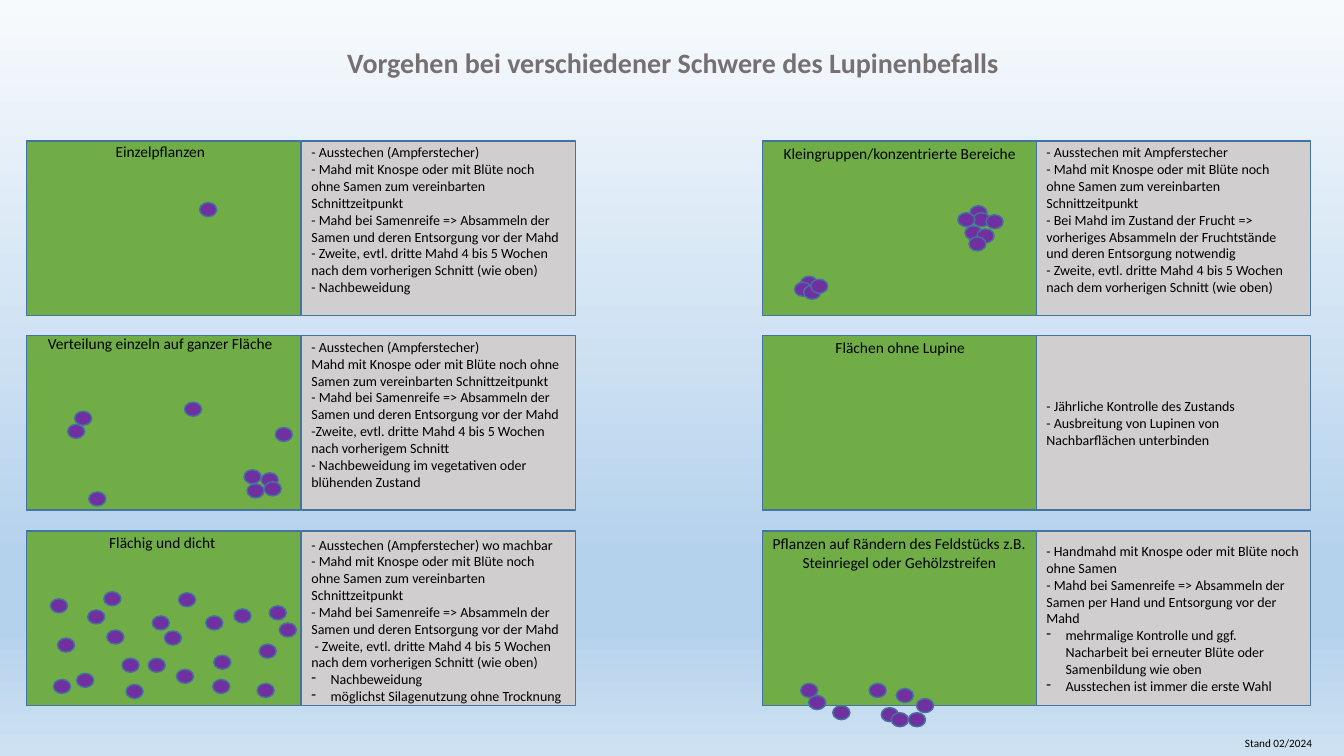
from dataclasses import dataclass

import pptx
import pptx.dml.color
import pptx.enum.shapes
import pptx.enum.text
import pptx.oxml.ns
import pptx.util
from lxml import etree

Inches = pptx.util.Inches
RGBColor = pptx.dml.color.RGBColor
Align = pptx.enum.text.PP_ALIGN
Anchor = pptx.enum.text.MSO_ANCHOR
Shape = pptx.enum.shapes.MSO_SHAPE
qn = pptx.oxml.ns.qn

BLACK = RGBColor(0x00, 0x00, 0x00)
TITLE_GRAY = RGBColor(0x76, 0x71, 0x71)
MEADOW_GREEN = RGBColor(0x70, 0xAD, 0x47)
NOTE_GRAY = RGBColor(0xD0, 0xCE, 0xCE)
LUPIN_PURPLE = RGBColor(0x70, 0x30, 0xA0)
OUTLINE_BLUE = RGBColor(0x43, 0x73, 0x9E)
SKY_STOPS = [
    (0, RGBColor(0xF7, 0xFA, 0xFD)),
    (74, RGBColor(0xB5, 0xD2, 0xEC)),
    (83, RGBColor(0xB5, 0xD2, 0xEC)),
    (100, RGBColor(0xCE, 0xE1, 0xF2)),
]

COLUMNS = [(0.26, 2.99), (7.56, 10.28)]  # left edges of meadow and measures
ROWS = [1.4, 3.33, 5.27]
PANEL_SIZE = (2.72, 1.73)
LUPIN_SIZE = (0.17, 0.14)

MOWING = "- Mahd mit Knospe oder mit Blüte noch ohne Samen zum vereinbarten Schnittzeitpunkt"
COLLECTING = "- Mahd bei Samenreife => Absammeln der Samen und deren Entsorgung vor der Mahd"
SECOND_CUT = "- Zweite, evtl. dritte Mahd 4 bis 5 Wochen nach dem vorherigen Schnitt (wie oben)"


@dataclass
class Panel:
    column: int
    row: int
    caption: str
    caption_box: tuple
    measures: list
    lupins: list
    bullets: int = 0  # number of hanging dash items at the end
    anchor: object = Anchor.MIDDLE
    bottom: float = 0.05


PANELS = [
    Panel(0, 0, "Einzelpflanzen", (0.81, 1.36, 1.56, 0.29),
          ["- Ausstechen (Ampferstecher)", MOWING, COLLECTING, SECOND_CUT, "- Nachbeweidung"],
          [(1.98, 2.01)], bottom=0.22),
    Panel(0, 1, "Verteilung einzeln auf ganzer Fläche", (0.3, 3.27, 2.58, 0.29),
          ["- Ausstechen (Ampferstecher)", MOWING.removeprefix("- "), COLLECTING,
           "-Zweite, evtl. dritte Mahd 4 bis 5 Wochen nach vorherigem Schnitt",
           "- Nachbeweidung im vegetativen oder blühenden Zustand"],
          [(0.74, 4.08), (0.67, 4.21), (0.88, 4.88), (1.83, 3.99), (2.59, 4.69),
           (2.62, 4.78), (2.45, 4.8), (2.42, 4.66), (2.73, 4.24)], bottom=0.22),
    Panel(0, 2, "Flächig und dicht", (0.83, 5.24, 1.56, 0.29),
          ["- Ausstechen (Ampferstecher) wo machbar", MOWING, COLLECTING, " " + SECOND_CUT,
           "Nachbeweidung", "möglichst Silagenutzung ohne Trocknung"],
          [(0.87, 6.05), (0.5, 5.94), (0.57, 6.33), (0.76, 6.68), (0.53, 6.74), (1.75, 6.64),
           (2.12, 6.5), (2.55, 6.78), (2.77, 6.18), (1.63, 6.26), (1.21, 6.53), (1.51, 6.11),
           (2.57, 6.39), (2.32, 6.04), (1.03, 5.87), (1.06, 6.25), (1.77, 5.88), (2.67, 6.01),
           (1.25, 6.79), (2.11, 6.74), (1.47, 6.53), (2.04, 6.11)],
          bullets=2, anchor=Anchor.TOP),
    Panel(1, 0, "Kleingruppen/konzentrierte Bereiche", (7.51, 1.38, 2.83, 0.29),
          ["- Ausstechen mit Ampferstecher", MOWING,
           "- Bei Mahd im Zustand der Frucht => vorheriges Absammeln der Fruchtstände "
           "und deren Entsorgung notwendig", SECOND_CUT],
          [(7.94, 2.74), (7.88, 2.8), (7.97, 2.83), (9.62, 2.04), (9.65, 2.11), (9.57, 2.24),
           (9.69, 2.27), (9.78, 2.13), (9.61, 2.35), (8.04, 2.77), (9.5, 2.11)], bottom=0.22),
    Panel(1, 1, "Flächen ohne Lupine", (8.15, 3.31, 1.56, 0.29),
          ["- Jährliche Kontrolle des Zustands",
           "- Ausbreitung von Lupinen von Nachbarflächen unterbinden"], []),
    Panel(1, 2, "Pflanzen auf Rändern des Feldstücks z.B. Steinriegel oder Gehölzstreifen",
          (7.56, 5.25, 2.72, 0.47),
          ["- Handmahd mit Knospe oder mit Blüte noch ohne Samen",
           "- Mahd bei Samenreife => Absammeln der Samen per Hand und Entsorgung vor der Mahd",
           "mehrmalige Kontrolle und ggf. Nacharbeit bei erneuter Blüte oder Samenbildung wie oben",
           "Ausstechen ist immer die erste Wahl"],
          [(7.94, 6.78), (8.02, 6.9), (8.26, 7), (8.62, 6.78), (8.74, 7.02), (8.84, 7.07),
           (9.01, 7.07), (9.09, 6.93), (8.89, 6.83)], bullets=2),
]


def set_dash_bullet(paragraph):
    properties = paragraph._p.get_or_add_pPr()
    properties.set("marL", str(Inches(0.19)))
    properties.set("indent", str(-Inches(0.19)))
    etree.SubElement(properties, qn("a:buChar")).set("char", "-")


def write_text(shape, lines, size=10, color=BLACK, bold=False, align=Align.LEFT,
               anchor=Anchor.TOP, wrap=True, bottom=0.05, bullets=0):
    frame = shape.text_frame
    frame.word_wrap = wrap
    frame.auto_size = pptx.enum.text.MSO_AUTO_SIZE.NONE
    frame.vertical_anchor = anchor
    frame.margin_left = frame.margin_right = Inches(0.1)
    frame.margin_top, frame.margin_bottom = Inches(0.05), Inches(bottom)
    for index, line in enumerate(lines):
        paragraph = frame.add_paragraph() if index else frame.paragraphs[0]
        if index >= len(lines) - bullets:
            set_dash_bullet(paragraph)
        paragraph.alignment = align
        run = paragraph.add_run()
        run.text = line
        run.font.name = "Calibri"
        run.font.size = pptx.util.Pt(size)
        run.font.bold = bold
        run.font.color.rgb = color


def add_filled_shape(slide, kind, position, size, color):
    shape = slide.shapes.add_shape(kind, *map(Inches, position + size))
    shape.shadow.inherit = False
    shape.fill.solid()
    shape.fill.fore_color.rgb = color
    shape.line.color.rgb = OUTLINE_BLUE
    shape.line.width = pptx.util.Pt(1)
    return shape


def add_label(slide, box, text, **text_format):
    write_text(slide.shapes.add_textbox(*map(Inches, box)), [text], **text_format)


def add_panel(slide, panel):
    meadow_left, measures_left = COLUMNS[panel.column]
    top = ROWS[panel.row]
    measures = add_filled_shape(slide, Shape.RECTANGLE, (measures_left, top), PANEL_SIZE, NOTE_GRAY)
    write_text(measures, panel.measures, anchor=panel.anchor, bottom=panel.bottom,
               bullets=panel.bullets)
    add_filled_shape(slide, Shape.RECTANGLE, (meadow_left, top), PANEL_SIZE, MEADOW_GREEN)
    for position in panel.lupins:
        add_filled_shape(slide, Shape.FLOWCHART_CONNECTOR, position, LUPIN_SIZE, LUPIN_PURPLE)
    add_label(slide, panel.caption_box, panel.caption, size=11, align=Align.CENTER)


def set_background(slide):
    fill = slide.background.fill
    fill.gradient()
    fill.gradient_angle = 270
    stops = slide.element.find(".//" + qn("a:gsLst"))
    for stop in list(stops):
        stops.remove(stop)
    for percent, color in SKY_STOPS:
        stop = etree.SubElement(stops, qn("a:gs"), pos=str(percent * 1000))
        etree.SubElement(stop, qn("a:srgbClr"), val=str(color))


def set_title(slide, text):
    title = slide.shapes.title
    title.left, title.top, title.width, title.height = map(Inches, (3.31, 0.4, 6.73, 0.44))
    write_text(title, [text], size=20, color=TITLE_GRAY, bold=True, align=Align.CENTER,
               anchor=Anchor.MIDDLE, wrap=False)


def main():
    presentation = pptx.Presentation()
    presentation.slide_width, presentation.slide_height = Inches(13.33), Inches(7.5)
    slide = presentation.slides.add_slide(presentation.slide_layouts[5])
    set_background(slide)
    set_title(slide, "Vorgehen bei verschiedener Schwere des Lupinenbefalls")

    # Infestation levels with their measures
    for panel in PANELS:
        add_panel(slide, panel)

    # Date of issue
    add_label(slide, (12.25, 7.26, 0.87, 0.24), "Stand 02/2024", size=8, wrap=False)
    presentation.save("out.pptx")


if __name__ == "__main__":
    main()
